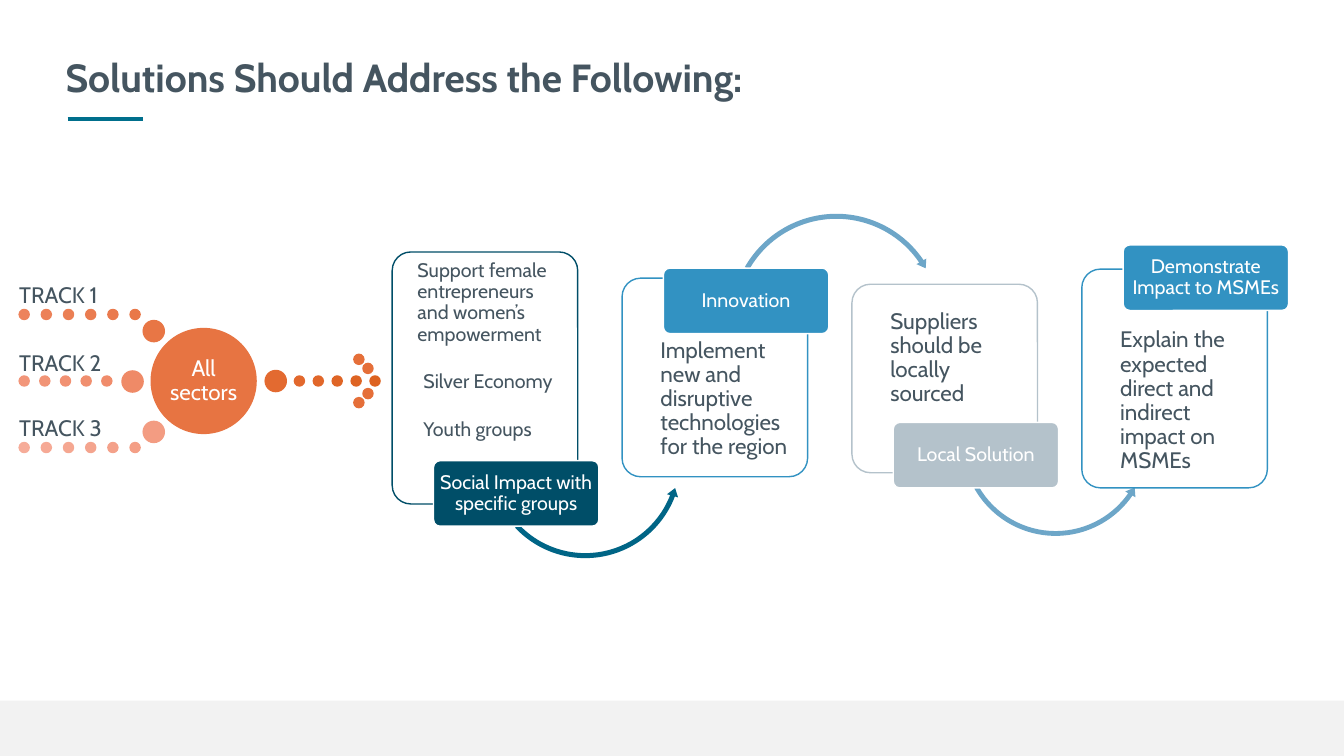
from dataclasses import dataclass
from typing import NamedTuple

from lxml.etree import SubElement
from pptx import Presentation
from pptx.dml.color import RGBColor
from pptx.enum.shapes import MSO_CONNECTOR, MSO_SHAPE
from pptx.enum.text import MSO_ANCHOR, MSO_AUTO_SIZE, PP_ALIGN
from pptx.oxml.ns import qn
from pptx.util import Inches, Pt


@dataclass(frozen=True)
class Theme:
    font: str = "Cabin"
    text: str = "455560"
    white: str = "FFFFFF"
    band: str = "F2F2F2"
    rule: str = "006F8C"
    navy: str = "004E68"
    teal: str = "006586"
    blue: str = "3292C2"
    sky: str = "6DA6C8"
    grey: str = "B4C2CB"
    hub: str = "E77442"
    head: str = "E56F39"
    output: tuple = ("E36A30", "DD6220")
    title_size: int = 28
    body_size: int = 16
    small_size: int = 14
    line_spacing: float = 0.9


class Box(NamedTuple):
    left: float
    top: float
    width: float
    height: float

    def lengths(self):
        return [Inches(value) for value in self]


class Card(NamedTuple):
    label: str
    label_dy: float     # label top, from the card top
    top: float
    height: float
    body_dy: float      # body top, from the card top
    body_height: float
    color: str
    size: int
    lines: list         # (text, left margin, space before)


THEME = Theme()
DOT, NODE = 0.1, 0.21
CARD_LEFT, CARD_PITCH, CARD_WIDTH = 3.89, 2.28, 1.84

CARDS = [
    Card("Social Impact with specific groups", 2.07, 2.5, 2.5, 0.05, 1.86,
         THEME.navy, THEME.small_size,
         [("Support female entrepreneurs and women’s empowerment", 0.06, 0),
          ("Silver Economy", 0.12, 19), ("Youth groups", 0.12, 19)]),
    Card("Innovation", -0.1, 2.76, 1.97, 0.47, 1.46, THEME.blue, THEME.body_size,
         [("Implement new and disruptive technologies for the region", 0.19, 0)]),
    Card("Local Solution", 1.37, 2.82, 1.87, 0.04, 1.39, THEME.grey, THEME.body_size,
         [("Suppliers should be locally sourced", 0.19, 0)]),
    Card("Demonstrate Impact to MSMEs", -0.24, 2.67, 2.17, 0.51, 1.6,
         THEME.blue, THEME.body_size,
         [("Explain the expected direct and indirect impact on MSMEs", 0.19, 0)]),
]

# Arrow leaving each card but the last: shape, box, adjustments, colour
ARROWS = [
    (MSO_SHAPE.LEFT_CIRCULAR_ARROW, Box(4.82, 3.6, 1.97, 1.97),
     (0.025, 3.009, 12.675, 82.155, 0.029), THEME.teal),
    (MSO_SHAPE.CIRCULAR_ARROW, Box(7.22, 2.09, 2.15, 2.15),
     (0.023, 2.738, 195.514, 125.762, 0.026), THEME.sky),
    (MSO_SHAPE.LEFT_CIRCULAR_ARROW, Box(9.51, 3.43, 1.92, 1.92),
     (0.025, 3.094, 20.872, 90.268, 0.03), THEME.sky),
]

# Track: name, label top, dot top, dot count, dot pitch, node position, colour range
TRACKS = [
    ("TRACK 1", 2.8, 3.07, 6, 0.22, (1.42, 3.18), ("ED835C", "E87645")),
    ("TRACK 2", 3.47, 3.73, 5, 0.205, (1.21, 3.68), ("F2967A", "EF8A67")),
    ("TRACK 3", 4.12, 4.39, 6, 0.22, (1.42, 4.18), ("F6AC99", "F39C82")),
]


def rgb(color):
    return RGBColor.from_string(color)


def blend(start, end, share):
    pairs = zip(rgb(start), rgb(end))
    return str(RGBColor(*(round(a + (b - a) * share) for a, b in pairs)))


def add_filled(slide, kind, box, fill, line=None):
    shape = slide.shapes.add_shape(kind, *box.lengths())
    shape.shadow.inherit = False
    shape.fill.solid()
    shape.fill.fore_color.rgb = rgb(fill)
    if line:
        shape.line.color.rgb = rgb(line)
        shape.line.width = Pt(1)
    else:
        shape.line.fill.background()
    return shape


def set_frame(frame, inset_x, inset_y, anchor):
    frame.word_wrap = True
    frame.auto_size = MSO_AUTO_SIZE.NONE
    frame.vertical_anchor = anchor
    frame.margin_left = frame.margin_right = Inches(inset_x)
    frame.margin_top = frame.margin_bottom = Inches(inset_y)


def write(paragraph, text, size, color=THEME.text, align=PP_ALIGN.LEFT, bold=False):
    paragraph.text = text
    paragraph.alignment = align
    paragraph.line_spacing = THEME.line_spacing
    font = paragraph.font
    font.name, font.size, font.bold = THEME.font, Pt(size), bold
    font.color.rgb = rgb(color)


def write_centred(shape, text, size):
    set_frame(shape.text_frame, 0.02, 0.02, MSO_ANCHOR.MIDDLE)
    write(shape.text_frame.paragraphs[0], text, size, THEME.white, PP_ALIGN.CENTER)


def add_dot(slide, left, top, color, size=DOT):
    return add_filled(slide, MSO_SHAPE.OVAL, Box(left, top, size, size), color, color)


def add_header(slide, box):
    title = slide.shapes.title
    title.left, title.top, title.width, title.height = box.lengths()
    set_frame(title.text_frame, 0.1, 0.05, MSO_ANCHOR.MIDDLE)
    write(title.text_frame.paragraphs[0], "Solutions Should Address the Following:",
          THEME.title_size, bold=True)
    left, top = box.left + 0.12, box.top + 0.66
    rule = slide.shapes.add_connector(MSO_CONNECTOR.STRAIGHT, Inches(left), Inches(top),
                                      Inches(left + 0.75), Inches(top))
    rule.line.color.rgb = rgb(THEME.rule)
    rule.line.width = Pt(3)
    SubElement(rule.line._get_or_add_ln().getparent(), qn("a:effectLst"))


def add_track(slide, left, track):
    name, label_top, dot_top, count, pitch, node, (far, near) = track
    label = slide.shapes.add_textbox(*Box(left, label_top, 1.21, 0.26).lengths())
    set_frame(label.text_frame, 0, 0, MSO_ANCHOR.BOTTOM)
    write(label.text_frame.paragraphs[0], name, THEME.body_size)
    for i in range(count):
        add_dot(slide, left + i * pitch, dot_top, blend(far, near, i / count))
    add_dot(slide, *node, near, NODE)


def add_hub(slide, box):
    hub = add_filled(slide, MSO_SHAPE.OVAL, box, THEME.hub, THEME.hub)
    write_centred(hub, "All sectors", THEME.body_size)
    # Dotted arrow to the cards
    right, middle = box.left + box.width, box.top + box.height / 2
    near, far = THEME.output
    add_dot(slide, right + 0.09, middle - NODE / 2, near, NODE)
    for i in range(5):
        add_dot(slide, right + 0.38 + i * 0.1875, middle - DOT / 2,
                blend(near, far, (i + 1) / 5))
    for dx, dy in ((0.97, 0.215), (1.06, 0.125)):
        for side in (-1, 1):
            add_dot(slide, right + dx, middle + side * dy - DOT / 2, THEME.head)


def add_card(slide, box, card, arrow):
    frame = add_filled(slide, MSO_SHAPE.ROUNDED_RECTANGLE, box, THEME.white, card.color)
    frame.adjustments[0] = 0.1
    body = slide.shapes.add_textbox(*Box(box.left + 0.05, box.top + card.body_dy,
                                         1.76, card.body_height).lengths())
    set_frame(body.text_frame, 0.14, 0.14, MSO_ANCHOR.MIDDLE)
    for i, (text, margin, before) in enumerate(card.lines):
        paragraph = body.text_frame.add_paragraph() if i else body.text_frame.paragraphs[0]
        write(paragraph, text, card.size)
        paragraph.space_before = Pt(before)
        paragraph._p.get_or_add_pPr().set("marL", str(Inches(margin)))
    if arrow:
        kind, arrow_box, adjustments, color = arrow
        arc = add_filled(slide, kind, arrow_box, color)
        for i, value in enumerate(adjustments):
            arc.adjustments[i] = value
    label = add_filled(slide, MSO_SHAPE.ROUNDED_RECTANGLE,
                       Box(box.left + 0.41, box.top + card.label_dy, 1.64, 0.65),
                       card.color, THEME.white)
    label.adjustments[0] = 0.1
    write_centred(label, card.label, THEME.small_size)


def main():
    deck = Presentation()
    deck.slide_width, deck.slide_height = Inches(13.33), Inches(7.5)
    slide = deck.slides.add_slide(deck.slide_layouts[5])

    # Footer band and header
    add_filled(slide, MSO_SHAPE.RECTANGLE, Box(0, 6.95, 13.33, 0.55), THEME.band)
    add_header(slide, Box(0.55, 0.52, 12.11, 0.54))

    # Cards, linked by arrows
    for i, (card, arrow) in enumerate(zip(CARDS, ARROWS + [None])):
        box = Box(CARD_LEFT + i * CARD_PITCH, card.top, CARD_WIDTH, card.height)
        add_card(slide, box, card, arrow)

    # Tracks leading into the hub
    add_hub(slide, Box(1.5, 3.26, 1.04, 1.04))
    for track in TRACKS:
        add_track(slide, 0.19, track)

    deck.save("out.pptx")


if __name__ == "__main__":
    main()
